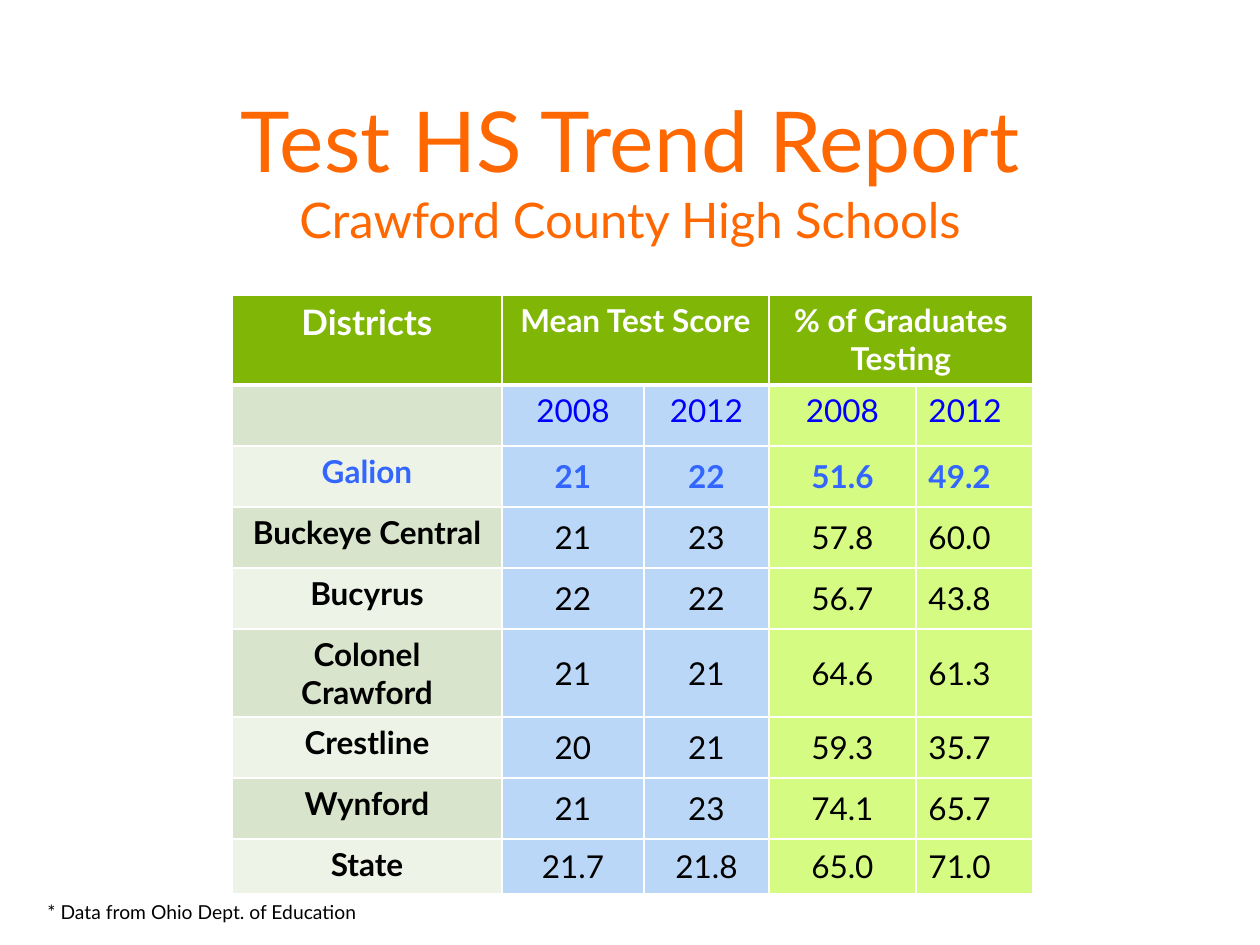
from lxml import etree
from pptx import Presentation
from pptx import util as u
from pptx.dml.color import RGBColor
from pptx.enum import text
from pptx.oxml import ns

PX_PER_INCH = 126
FONT = "Lato"
ORANGE, WHITE, BLACK = "FF6700", "FFFFFF", "000000"
HEADER_GREEN, SCORE_BLUE, TESTING_LIME = "80B606", "BBD7F8", "D6FB82"
DISTRICT_BANDS = ("D8E5CC", "EDF3E7")
YEAR_BLUE, HIGHLIGHT_BLUE = "0000FF", "3366FF"

HEADERS = ["Districts", "Mean Test Score", "", "% of Graduates Testing", ""]
YEARS = ["", "2008", "2012", "2008", "2012"]
DISTRICTS = [
    ["Galion", "21", "22", "51.6", "49.2"],
    ["Buckeye Central", "21", "23", "57.8", "60.0"],
    ["Bucyrus", "22", "22", "56.7", "43.8"],
    ["Colonel Crawford", "21", "21", "64.6", "61.3"],
    ["Crestline", "20", "21", "59.3", "35.7"],
    ["Wynford", "21", "23", "74.1", "65.7"],
    ["State", "21.7", "21.8", "65.0", "71.0"],
]
COLUMN_WIDTHS = [270, 142, 125, 147, 117]
ROW_HEIGHTS = [90] + [61] * 7 + [55]


def px(length):
    return u.Emu(round(length * 914400 / PX_PER_INCH))


def rgb(color):
    return RGBColor.from_string(color)


def set_font(font, size, color, bold=False):
    font.name, font.size, font.bold = FONT, u.Pt(size), bold
    font.color.rgb = rgb(color)


def set_borders(cell, widths):
    """Draw white borders; widths are points for left, right, top, bottom."""
    properties = cell._tc.get_or_add_tcPr()
    for index, (side, width) in enumerate(zip("LRTB", widths)):
        line = etree.Element(ns.qn(f"a:ln{side}"), w=str(u.Pt(width)))
        fill = etree.SubElement(line, ns.qn("a:solidFill"))
        etree.SubElement(fill, ns.qn("a:srgbClr"), val=WHITE)
        properties.insert(index, line)


def add_title(slide, left, top, width, height):
    title = slide.shapes.title
    title.left, title.top, title.width, title.height = map(px, (left, top, width, height))
    frame = title.text_frame
    frame.auto_size = text.MSO_AUTO_SIZE.NONE
    frame.vertical_anchor = text.MSO_ANCHOR.MIDDLE
    paragraph = frame.paragraphs[0]
    paragraph.alignment = text.PP_ALIGN.CENTER
    heading = paragraph.add_run()
    heading.text = "Test HS Trend Report"
    set_font(heading.font, 48, ORANGE)
    paragraph.add_line_break()
    subheading = paragraph.add_run()
    subheading.text = "Crawford County High Schools"
    set_font(subheading.font, 28, ORANGE)


def cell_colors(row, column):
    """Return the fill and text colours of a cell."""
    if row == 0:
        return HEADER_GREEN, WHITE
    if column == 0:
        fill = DISTRICT_BANDS[(row - 1) % 2]
    else:
        fill = SCORE_BLUE if column < 3 else TESTING_LIME
    return fill, {1: YEAR_BLUE, 2: HIGHLIGHT_BLUE}.get(row, BLACK)


def format_cell(cell, row, column, value):
    fill, color = cell_colors(row, column)
    cell.fill.solid()
    cell.fill.fore_color.rgb = rgb(fill)
    set_borders(cell, (1, 1, 3 if row == 1 else 1, 3 if row == 0 else 1))
    is_result = row > 1 and column > 0
    cell.vertical_anchor = text.MSO_ANCHOR.MIDDLE if is_result else text.MSO_ANCHOR.TOP
    cell.text = value
    paragraph = cell.text_frame.paragraphs[0]
    is_left = row > 0 and column == 4
    paragraph.alignment = text.PP_ALIGN.LEFT if is_left else text.PP_ALIGN.CENTER
    bold = row in (0, 2) or (column == 0 and row > 1)
    set_font(paragraph.font, 20 if row == column == 0 else 18, color, bold)


def add_score_table(slide, left, top):
    rows = [HEADERS, YEARS, *DISTRICTS]
    table = slide.shapes.add_table(
        len(rows), len(COLUMN_WIDTHS), px(left), px(top),
        px(sum(COLUMN_WIDTHS)), px(sum(ROW_HEIGHTS))).table
    for column, width in zip(table.columns, COLUMN_WIDTHS):
        column.width = px(width)
    for row, height in zip(table.rows, ROW_HEIGHTS):
        row.height = px(height)
    for row, values in enumerate(rows):
        for column, value in enumerate(values):
            format_cell(table.cell(row, column), row, column, value)
    for first in (1, 3):
        table.cell(0, first).merge(table.cell(0, first + 1))


def add_source_note(slide, left, top, width, height):
    frame = slide.shapes.add_textbox(*map(px, (left, top, width, height))).text_frame
    frame.word_wrap = True
    frame.auto_size = text.MSO_AUTO_SIZE.SHAPE_TO_FIT_TEXT
    paragraph = frame.paragraphs[0]
    paragraph.text = "* Data from Ohio Dept. of Education"
    set_font(paragraph.font, 11, BLACK)


def main():
    presentation = Presentation()
    presentation.slide_width, presentation.slide_height = px(1260), px(945)
    slide = presentation.slides.add_slide(presentation.slide_layouts[5])
    add_title(slide, 63, 48, 1134, 241)
    add_score_table(slide, 232, 295)
    add_source_note(slide, 35, 894, 499, 36)
    presentation.save("out.pptx")


if __name__ == "__main__":
    main()
